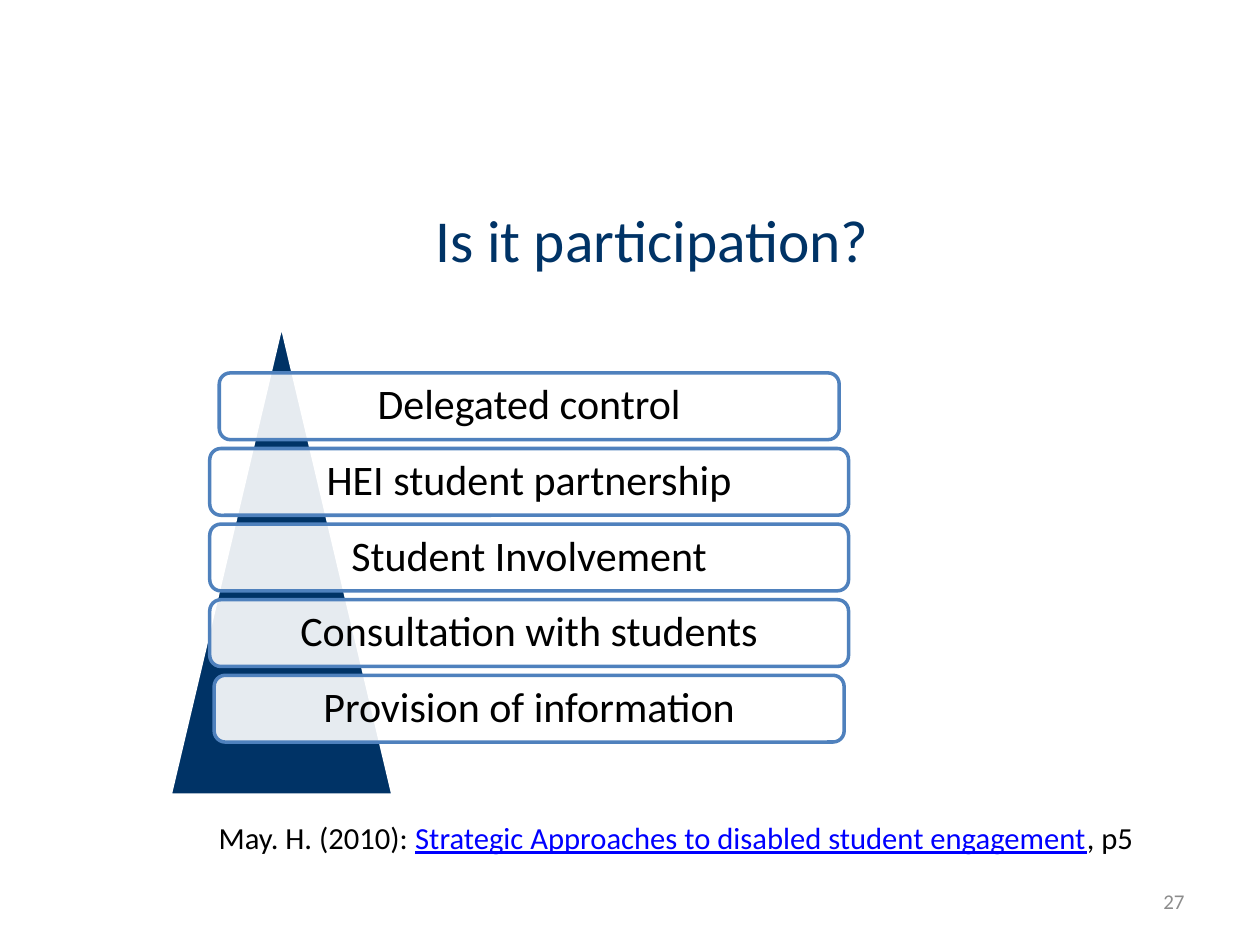
from lxml.etree import SubElement
from pptx import Presentation
from pptx.dml.color import RGBColor
from pptx.enum.shapes import MSO_SHAPE
from pptx.enum.text import MSO_ANCHOR, PP_ALIGN
from pptx.oxml.ns import qn
from pptx.util import Inches, Pt

NAVY, BLUE, WHITE, BLACK = "003366", "4F81BD", "FFFFFF", "000000"
GREY, LINK = "8C8C8C", "0000FF"

LEVELS = [
    ("Delegated control", 4.92),
    ("HEI student partnership", 5.07),
    ("Student Involvement", 5.07),
    ("Consultation with students", 5.07),
    ("Provision of information", 5),
]
LEVEL_CENTRE, LEVEL_TOP, LEVEL_STEP, LEVEL_HEIGHT = 4.2, 2.96, 0.6, 0.53


def color(value):
    return RGBColor.from_string(value)


def add_run(paragraph, text, size=24, fill=BLACK, font="Calibri", underline=False):
    run = paragraph.add_run()
    run.text = text
    run.font.name = font
    run.font.size = Pt(size)
    run.font.color.rgb = color(fill)
    run.font.underline = underline


class SlideBuilder:
    def __init__(self, slide, font="Calibri"):
        self.slide = slide
        self.font = font

    def fill_text(self, shape, runs, align, anchor=MSO_ANCHOR.MIDDLE, spacing=1.0):
        frame = shape.text_frame
        frame.word_wrap = True
        frame.vertical_anchor = anchor
        paragraph = frame.paragraphs[0]
        paragraph.alignment = align
        paragraph.line_spacing = spacing
        for text, style in runs:
            add_run(paragraph, text, font=self.font, **style)

    def text(self, box, runs, align, **layout):
        shape = self.slide.shapes.add_textbox(*map(Inches, box))
        self.fill_text(shape, runs, align, **layout)

    def shape(self, kind, box, fill, line, opacity=100):
        shape = self.slide.shapes.add_shape(kind, *map(Inches, box))
        shape.shadow.inherit = False
        shape.fill.solid()
        shape.fill.fore_color.rgb = color(fill)
        shape.line.color.rgb = color(line)
        shape.line.width = Pt(2)
        if opacity < 100:
            fill_color = shape.element.spPr.find(qn("a:solidFill"))[0]
            SubElement(fill_color, qn("a:alpha"), val=str(opacity * 1000))
        return shape

    def level(self, text, width, top):
        box = (LEVEL_CENTRE - width / 2, top, width, LEVEL_HEIGHT)
        shape = self.shape(MSO_SHAPE.ROUNDED_RECTANGLE, box, WHITE, BLUE, opacity=90)
        frame = shape.text_frame
        frame.margin_left = frame.margin_right = Inches(0.1)
        frame.margin_top = frame.margin_bottom = Inches(0.1)
        self.fill_text(shape, [(text, {})], PP_ALIGN.CENTER, spacing=0.9)


def main():
    presentation = Presentation()
    presentation.slide_width = Inches(10)
    presentation.slide_height = Inches(7.5)
    builder = SlideBuilder(presentation.slides.add_slide(presentation.slide_layouts[6]))

    builder.text((7.17, 6.95, 2.33, 0.4), [("27", {"size": 12, "fill": GREY})], PP_ALIGN.RIGHT)
    builder.text((0.83, 1.39, 8.69, 1.01),
                 [("Is it participation?", {"size": 34, "fill": NAVY})], PP_ALIGN.CENTER)

    builder.shape(MSO_SHAPE.ISOSCELES_TRIANGLE, (1.35, 2.57, 1.77, 3.74), NAVY, WHITE)
    for index, (text, width) in enumerate(LEVELS):
        builder.level(text, width, LEVEL_TOP + index * LEVEL_STEP)

    citation = [
        ("May. H. (2010): ", {"size": 17.5}),
        ("Strategic Approaches to disabled student engagement",
         {"size": 17.5, "fill": LINK, "underline": True}),
        (", p5", {"size": 17.5}),
    ]
    builder.text((1.14, 6.51, 7.95, 0.63), citation, PP_ALIGN.RIGHT,
                 anchor=MSO_ANCHOR.TOP, spacing=0.8)

    presentation.save("out.pptx")


if __name__ == "__main__":
    main()
